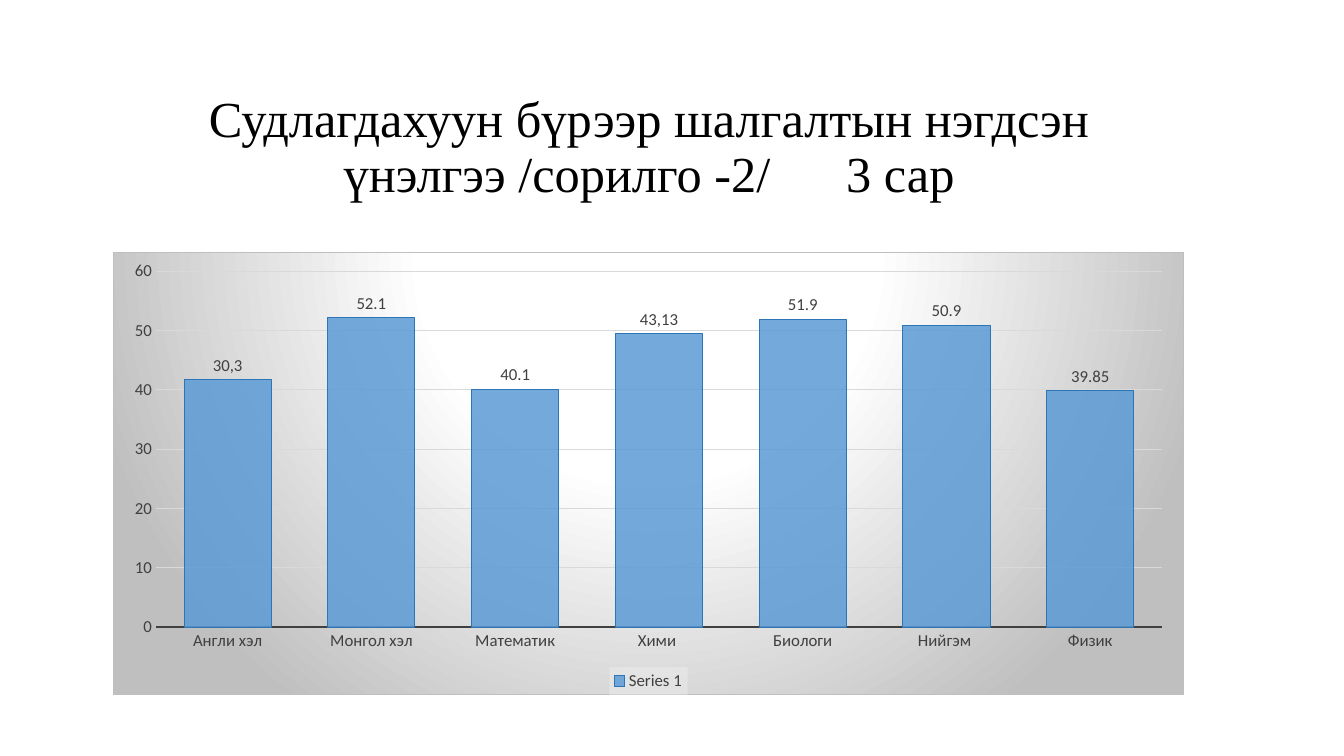
from lxml.etree import SubElement
from pptx import Presentation
from pptx.chart.data import CategoryChartData
from pptx.dml.color import RGBColor
from pptx.enum.chart import XL_CHART_TYPE, XL_LABEL_POSITION, XL_LEGEND_POSITION, XL_TICK_MARK
from pptx.enum.text import MSO_ANCHOR, MSO_AUTO_SIZE, PP_ALIGN
from pptx.oxml import parse_xml
from pptx.oxml.ns import nsdecls, qn
from pptx.util import Inches, Pt

TITLE = ["Судлагдахуун бүрээр шалгалтын нэгдсэн үнэлгээ /сорилго -2/", " ", "3 сар"]
SERIES = "Series 1"
SCORES = [
    ("Англи хэл", 41.7, "30,3"),
    ("Монгол хэл", 52.1, None),
    ("Математик", 40.1, None),
    ("Хими ", 49.4, "43,13"),
    ("Биологи", 51.9, None),
    ("Нийгэм ", 50.9, None),
    ("Физик", 39.85, None),
]
THEME = {
    "title_font": "Times New Roman", "title_size": 36, "title": "000000", "title_gap": 4500,
    "font": "Calibri", "size": 12, "text": "404040",
    "bar": "5B9BD5", "bar_line": "2E75B6", "grid": "D9D9D9", "border": "BFBFBF",
    "legend": "F2F2F2",
    "gradient": [(0, "FFFFFF"), (39, "FFFFFF"), (100, "BFBFBF")],
}
WIDTH, HEIGHT = Inches(13.33), Inches(7.5)
TITLE_BOX = (0.068, 0.087, 0.83, 0.219)
CHART_BOX = (0.084, 0.333, 0.797, 0.587)


def place(box):
    return [int(share * side) for share, side in zip(box, (WIDTH, HEIGHT) * 2)]


def style_font(font, name, size, color):
    font.name, font.size, font.bold = name, Pt(size), False
    font.color.rgb = RGBColor.from_string(color)


def style_label(font):
    style_font(font, THEME["font"], THEME["size"], THEME["text"])


def style_line(line, color, width):
    line.color.rgb = RGBColor.from_string(color)
    line.width = Pt(width)


def add_title(slide):
    sp = slide.shapes.title
    sp.left, sp.top, sp.width, sp.height = place(TITLE_BOX)
    tf = sp.text_frame
    tf.word_wrap, tf.auto_size = True, MSO_AUTO_SIZE.NONE
    tf.vertical_anchor = MSO_ANCHOR.MIDDLE
    p = tf.paragraphs[0]
    p.alignment, p.line_spacing = PP_ALIGN.CENTER, 0.9
    for text in TITLE:
        r = p.add_run()
        r.text = text
        style_font(r.font, THEME["title_font"], THEME["title_size"], THEME["title"])
    p.runs[1].font._element.set("spc", str(THEME["title_gap"]))


def fill_chart_area(chart):
    stops = "".join(
        f'<a:gs pos="{pos * 1000}"><a:srgbClr val="{color}"/></a:gs>'
        for pos, color in THEME["gradient"])
    area = parse_xml(
        f'<c:spPr {nsdecls("c", "a")}><a:gradFill><a:gsLst>{stops}</a:gsLst>'
        '<a:path path="circle"><a:fillToRect l="50000" t="-80000" r="50000" b="180000"/></a:path>'
        f'</a:gradFill><a:ln w="{Pt(0.75)}"><a:solidFill><a:srgbClr val="{THEME["border"]}"/>'
        '</a:solidFill></a:ln></c:spPr>')
    chart.element.find(qn("c:chart")).addnext(area)


def style_axes(chart):
    for axis in (chart.category_axis, chart.value_axis):
        axis.major_tick_mark = axis.minor_tick_mark = XL_TICK_MARK.NONE
        style_label(axis.tick_labels.font)
    style_line(chart.category_axis.format.line, THEME["text"], 1.5)
    axis = chart.value_axis
    axis.minimum_scale, axis.maximum_scale, axis.major_unit = 0, 60, 10
    axis.format.line.fill.background()
    style_line(axis.major_gridlines.format.line, THEME["grid"], 0.75)


def style_bars(plot):
    plot.gap_width, plot.vary_by_categories = 65, False
    series = plot.series[0]
    fill = series.format.fill
    fill.solid()
    fill.fore_color.rgb = RGBColor.from_string(THEME["bar"])
    color = series.format._element.find(qn("c:spPr")).find(".//" + qn("a:srgbClr"))
    SubElement(color, qn("a:alpha"), val="85000")
    style_line(series.format.line, THEME["bar_line"], 0.75)
    labels = series.data_labels
    labels.show_value, labels.position = True, XL_LABEL_POSITION.OUTSIDE_END
    style_label(labels.font)
    for i, (_, _, text) in enumerate(SCORES):
        if text:
            label = series.points[i].data_label
            label.text_frame.text = text
            label.position = XL_LABEL_POSITION.OUTSIDE_END
            style_label(label.text_frame.paragraphs[0].runs[0].font)


def add_legend(chart):
    chart.has_legend = True
    legend = chart.legend
    legend.position, legend.include_in_layout = XL_LEGEND_POSITION.BOTTOM, False
    style_label(legend.font)
    box = parse_xml(
        f'<c:spPr {nsdecls("c", "a")}><a:solidFill><a:srgbClr val="{THEME["legend"]}">'
        '<a:alpha val="39000"/></a:srgbClr></a:solidFill></c:spPr>')
    legend._element.find(qn("c:txPr")).addprevious(box)


def add_scores(slide):
    data = CategoryChartData()
    data.categories = [name for name, _, _ in SCORES]
    data.add_series(SERIES, [value for _, value, _ in SCORES])
    chart = slide.shapes.add_chart(
        XL_CHART_TYPE.COLUMN_CLUSTERED, *place(CHART_BOX), data).chart
    chart.has_title = False
    style_label(chart.font)
    fill_chart_area(chart)
    style_axes(chart)
    style_bars(chart.plots[0])
    add_legend(chart)


def main():
    prs = Presentation()
    prs.slide_width, prs.slide_height = WIDTH, HEIGHT
    slide = prs.slides.add_slide(prs.slide_layouts[5])
    add_title(slide)
    add_scores(slide)
    prs.save("out.pptx")


if __name__ == "__main__":
    main()
